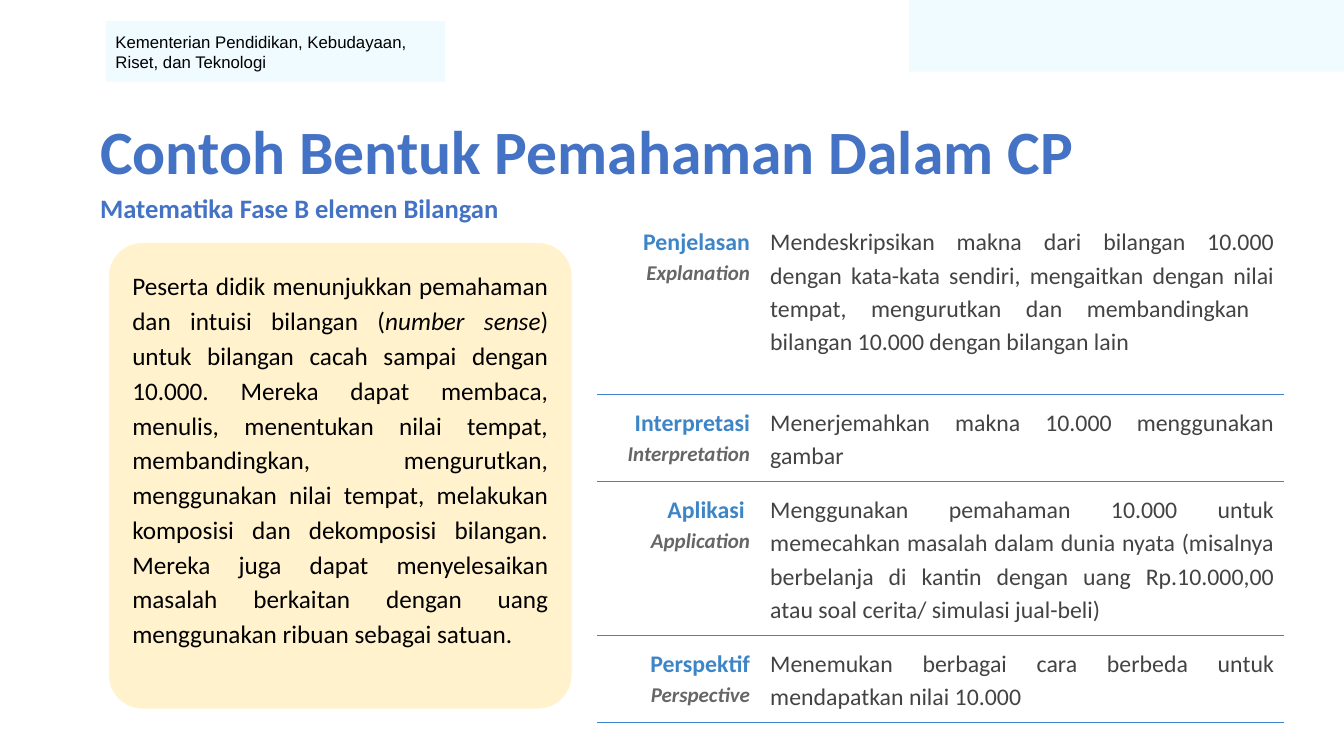
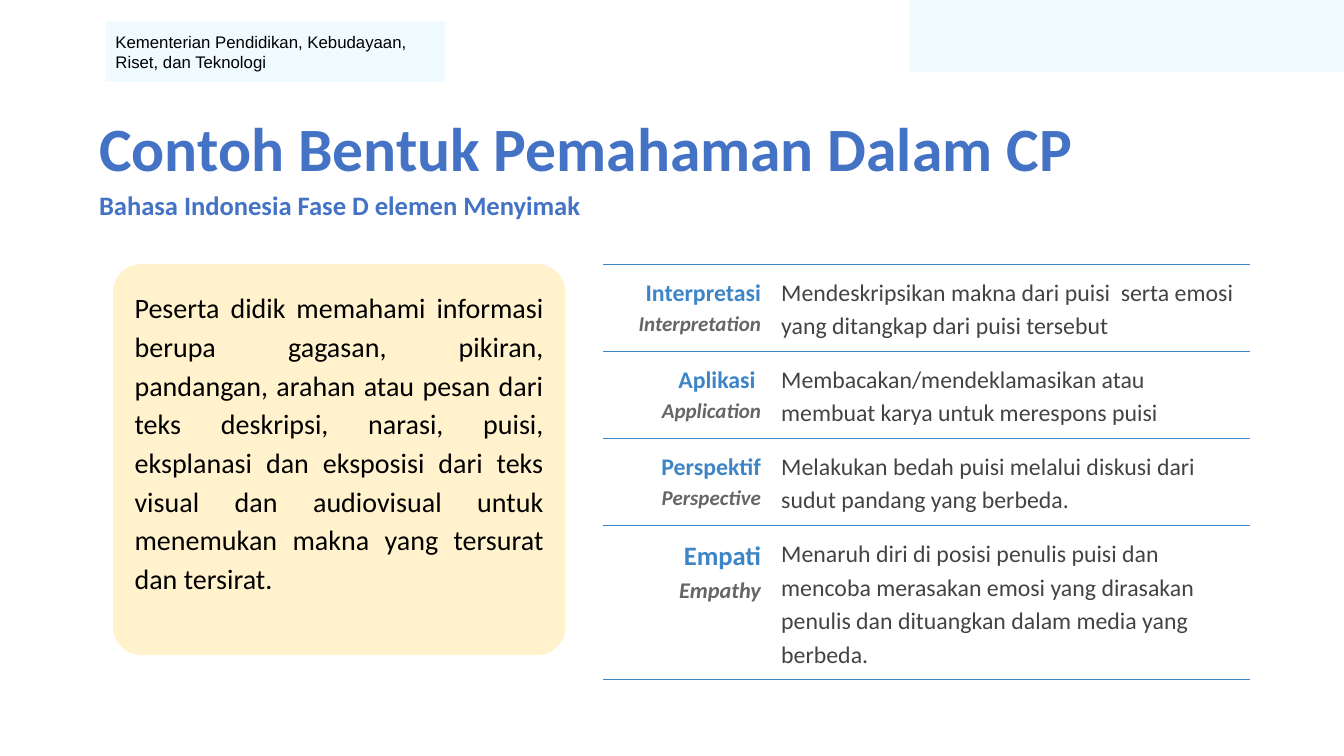
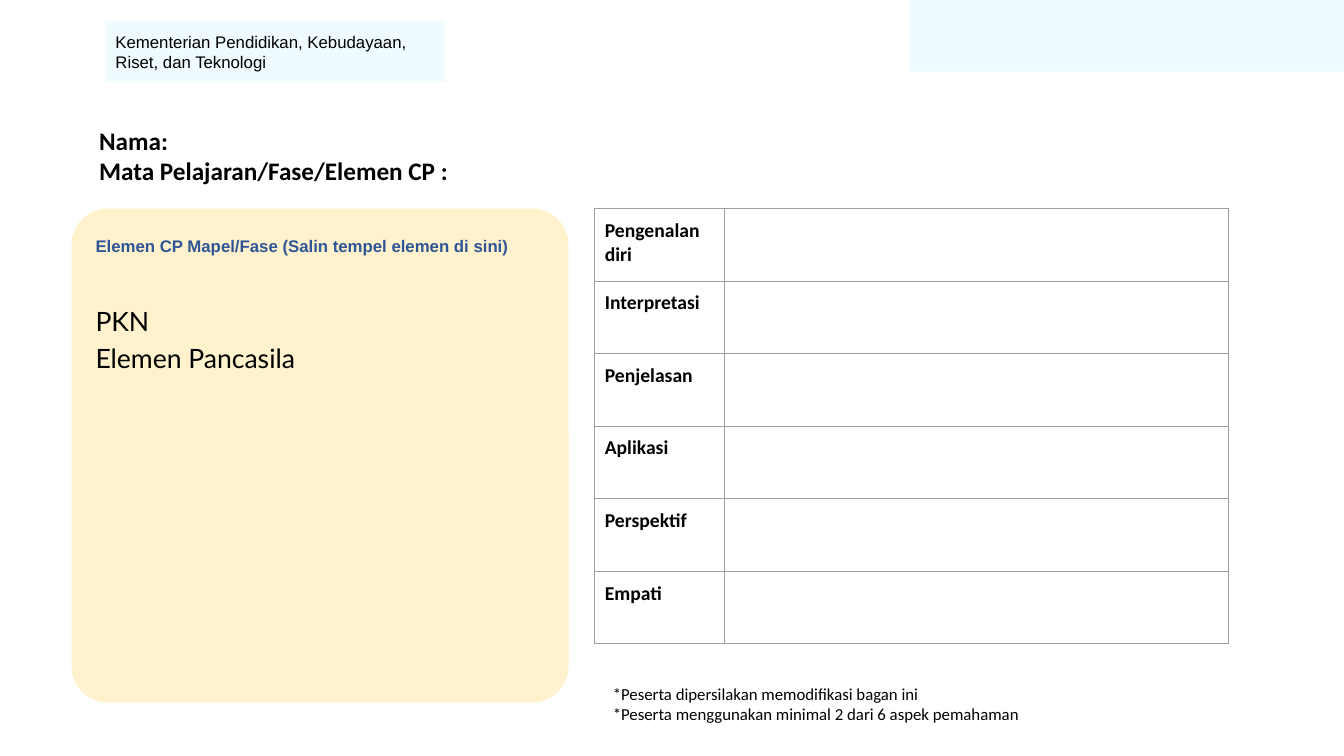
from lxml import etree
from pptx import Presentation
from pptx.dml.color import RGBColor
from pptx.enum.shapes import MSO_SHAPE
from pptx.enum.text import MSO_ANCHOR, MSO_AUTO_SIZE, PP_ALIGN
from pptx.oxml.ns import qn
from pptx.util import Pt

RECT, ROUNDED = MSO_SHAPE.RECTANGLE, MSO_SHAPE.ROUNDED_RECTANGLE
TOP, MIDDLE = MSO_ANCHOR.TOP, MSO_ANCHOR.MIDDLE
LEFT, RIGHT, JUSTIFY = PP_ALIGN.LEFT, PP_ALIGN.RIGHT, PP_ALIGN.JUSTIFY
NO_FIT = MSO_AUTO_SIZE.NONE

BLACK = RGBColor(0x00, 0x00, 0x00)
WHITE = RGBColor(0xFF, 0xFF, 0xFF)
PALE = RGBColor(0xF0, 0xFB, 0xFF)
CREAM = RGBColor(0xFF, 0xF2, 0xCC)
TITLE_BLUE = RGBColor(0x44, 0x72, 0xC4)
DEEP_BLUE = RGBColor(0x2F, 0x55, 0x97)
LINE_BLUE = RGBColor(0x3D, 0x85, 0xC6)
TEXT_GREY = RGBColor(0x43, 0x43, 0x43)
TERM_GREY = RGBColor(0x66, 0x66, 0x66)
GRID_GREY = RGBColor(0x9E, 0x9E, 0x9E)

SMALL, WIDE = 7.2, 9.6
LOOSE = {"line_spacing": 1.15}


def font(size, color=BLACK, name="Calibri", bold=False, italic=False):
    """Return the format values of a run."""
    return {"size": Pt(size), "color": color, "name": name, "bold": bold, "italic": italic}


HEADING = font(44, TITLE_BLUE, bold=True)
SUBHEADING = font(19, TITLE_BLUE, bold=True)
FORM_HEADING = font(18, bold=True)
FORM_LABEL = font(14, bold=True)
DESCRIPTION = font(17, TEXT_GREY)


def para(*runs, align=LEFT, **fmt):
    """Describe a paragraph by its runs and its format values."""
    return runs, {"alignment": align, **fmt}


def write(tf, paras):
    """Write described paragraphs into a text frame."""
    for i, (runs, fmt) in enumerate(paras):
        p = tf.paragraphs[0] if i == 0 else tf.add_paragraph()
        for key, value in fmt.items():
            setattr(p, key, value)
        for text, values in runs:
            r = p.add_run()
            r.text = text
            for key, value in values.items():
                if key == "color":
                    r.font.color.rgb = value
                else:
                    setattr(r.font, key, value)


def set_frame(tf, margin, anchor=TOP):
    """Set the insets, wrapping and anchor of a text frame."""
    values = {"word_wrap": True, "auto_size": NO_FIT, "vertical_anchor": anchor}
    for side in ("left", "right", "top", "bottom"):
        values["margin_" + side] = Pt(margin)
    for key, value in values.items():
        setattr(tf, key, value)


def add_block(slide, kind, box, color):
    """Add a flat filled shape without an outline."""
    sp = slide.shapes.add_shape(kind, *map(Pt, box))
    sp.shadow.inherit = False
    sp.fill.solid()
    sp.fill.fore_color.rgb = color
    sp.line.fill.background()
    return sp


def move_to_layout(sp, layout):
    """Move a shape from its slide to the layout."""
    layout.shapes.element.append(sp.element)


def build_bands(slide, layout):
    """Build the corner band and the ministry band on the layout."""
    corner = add_block(slide, RECT, (649.4, 0, 310.6, 51.2), PALE)
    ministry = add_block(slide, RECT, (75.4, 15.2, 242.6, 43.2), PALE)
    set_frame(ministry.text_frame, SMALL, MIDDLE)
    write(ministry.text_frame, [
        para(("Kementerian Pendidikan, Kebudayaan, Riset, dan Teknologi", font(12, name="Arial")))])
    for sp in (corner, ministry):
        move_to_layout(sp, layout)


def place_title(slide, box, paras):
    """Place and fill the title placeholder."""
    sp = slide.shapes.title
    for key, value in zip(("left", "top", "width", "height"), box):
        setattr(sp, key, Pt(value))
    set_frame(sp.text_frame, WIDE)
    write(sp.text_frame, paras)


def add_card(slide, box, paras):
    """Add the cream rounded card with its text."""
    sp = add_block(slide, ROUNDED, box, CREAM)
    sp.adjustments[0] = 0.073
    set_frame(sp.text_frame, WIDE)
    write(sp.text_frame, paras)


def set_borders(cell, colors):
    """Draw the cell borders named in colors and clear the others."""
    tc_pr = cell._tc.get_or_add_tcPr()
    for side in "LRTB":
        ln = etree.SubElement(tc_pr, qn("a:ln" + side), w=str(Pt(0.75)))
        if side in colors:
            fill = etree.SubElement(ln, qn("a:solidFill"))
            etree.SubElement(fill, qn("a:srgbClr"), val=str(colors[side]))
        else:
            etree.SubElement(ln, qn("a:noFill"))


def add_grid(slide, left, top, widths, heights, rows, borders):
    """Add a plain table; borders gives the colours by row number."""
    table = slide.shapes.add_table(len(heights), len(widths), Pt(left), Pt(top),
                                   Pt(sum(widths)), Pt(sum(heights))).table
    table.first_row = table.horz_banding = False
    for column, width in zip(table.columns, widths):
        column.width = Pt(width)
    for i, (height, paras_by_cell) in enumerate(zip(heights, rows)):
        table.rows[i].height = Pt(height)
        for cell, paras in zip(table.rows[i].cells, paras_by_cell):
            set_borders(cell, borders(i))
            cell.fill.background()
            for side in ("left", "right", "top", "bottom"):
                setattr(cell, "margin_" + side, Pt(SMALL))
            write(cell.text_frame, paras)


def add_aspects(slide, left, top, widths, heights, aspects, align, top_line):
    """Add the table of aspects of understanding."""
    def borders(i):
        """Return the horizontal rules of a row."""
        return {side: LINE_BLUE for side in "TB" if side == "B" or i or top_line}

    rows = []
    for name, term, text, name_size, term_size in aspects:
        rows.append((
            [para((name, font(name_size, LINE_BLUE, bold=True)), align=RIGHT, **LOOSE),
             para((term, font(term_size, TERM_GREY, bold=True, italic=True)), align=RIGHT, **LOOSE)],
            [para((text, DESCRIPTION), align=align, **LOOSE)]))
    add_grid(slide, left, top, widths, heights, rows, borders)


def add_example(slide, title_box, subject, card_box, card_runs, **aspects):
    """Fill a slide with an example: title, card and table of aspects."""
    place_title(slide, title_box, [
        para(("Contoh Bentuk Pemahaman Dalam CP", HEADING)), para((subject, SUBHEADING), **LOOSE)])
    add_aspects(slide, **aspects)
    add_card(slide, card_box, [para(*card_runs, align=JUSTIFY, **LOOSE)])


def add_form(slide):
    """Fill a slide with the worksheet form."""
    place_title(slide, (61.2, 79.9, 705, 39.6), [
        para((text, FORM_HEADING)) for text in ("Nama:", "Mata Pelajaran/Fase/Elemen CP :")])
    entry = font(19, name="Lato")
    add_card(slide, (51.1, 149, 355, 352.8), [
        para(("Elemen CP Mapel/Fase (Salin tempel elemen di sini)",
              font(12, DEEP_BLUE, "Arial", bold=True)), **LOOSE),
        para(("PKN", entry), space_before=Pt(32), **LOOSE),
        para(("Elemen Pancasila", entry), **LOOSE)])
    labels = ("Pengenalan diri", "Interpretasi", "Penjelasan", "Aplikasi", "Perspektif", "Empati")
    rows = [([para((label, FORM_LABEL))], []) for label in labels]
    add_grid(slide, 424.8, 149, (92.9, 360), [51.84] * len(labels), rows,
             lambda i: dict.fromkeys("LRTB", GRID_GREY))
    note = slide.shapes.add_textbox(*map(Pt, (430.6, 481, 409.7, 43.9)))
    set_frame(note.text_frame, SMALL)
    write(note.text_frame, [para((text, font(12))) for text in (
        "*Peserta dipersilakan memodifikasi bagan ini",
        "*Peserta menggunakan minimal 2 dari 6 aspek pemahaman")])


def main():
    """Build and save the presentation."""
    prs = Presentation()
    prs.slide_width, prs.slide_height = Pt(960), Pt(540)
    layout = prs.slide_layouts[5]
    background = prs.slide_master.background.fill
    background.solid()
    background.fore_color.rgb = WHITE
    numbers, listening, form = (prs.slides.add_slide(layout) for _ in range(3))
    build_bands(numbers, layout)

    body = font(18)
    add_example(
        numbers, (61.9, 71.3, 771, 60), "Matematika Fase B elemen Bilangan",
        (77.8, 173.5, 330.5, 332.6),
        [("Peserta didik menunjukkan pemahaman dan intuisi bilangan (", body),
         ("number sense", font(18, italic=True)),
         (") untuk bilangan cacah sampai dengan 10.000. Mereka dapat membaca, menulis, "
          "menentukan nilai tempat, membandingkan, mengurutkan, menggunakan nilai tempat, "
          "melakukan komposisi dan dekomposisi bilangan. Mereka juga dapat menyelesaikan "
          "masalah berkaitan dengan uang menggunakan ribuan sebagai satuan.", body)],
        left=426.4, top=152.6, widths=(116.6, 374.4), heights=(128.9, 58.3, 105.1, 61.2),
        align=JUSTIFY, top_line=False, aspects=[
            ("Penjelasan", "Explanation",
             "Mendeskripsikan makna dari bilangan 10.000 dengan kata-kata sendiri, mengaitkan "
             "dengan nilai tempat, mengurutkan dan membandingkan  bilangan 10.000 dengan "
             "bilangan lain", 17, 15),
            ("Interpretasi", "Interpretation",
             "Menerjemahkan makna 10.000 menggunakan gambar", 17, 15),
            ("Aplikasi ", "Application",
             "Menggunakan pemahaman 10.000 untuk memecahkan masalah dalam dunia nyata (misalnya "
             "berbelanja di kantin dengan uang Rp.10.000,00 atau soal cerita/ simulasi jual-beli)",
             17, 15),
            ("Perspektif", "Perspective",
             "Menemukan berbagai cara berbeda untuk mendapatkan nilai 10.000", 17, 15)])

    add_example(
        listening, (61.2, 69.1, 756.7, 39.6), "Bahasa Indonesia Fase D elemen Menyimak",
        (80.6, 188.6, 323.3, 279.4),
        [("Peserta didik memahami informasi berupa gagasan, pikiran, pandangan, arahan atau "
          "pesan dari teks deskripsi, narasi, puisi, eksplanasi dan eksposisi dari teks visual "
          "dan audiovisual untuk menemukan makna yang tersurat dan tersirat.", font(20))],
        left=430.6, top=188.6, widths=(120.2, 342), heights=(52.6, 52.6, 62.6, 95),
        align=LEFT, top_line=True, aspects=[
            ("Interpretasi", "Interpretation",
             "Mendeskripsikan makna dari puisi  serta emosi yang ditangkap dari puisi tersebut",
             17, 15),
            ("Aplikasi ", "Application",
             "Membacakan/mendeklamasikan atau membuat karya untuk merespons puisi", 17, 15),
            ("Perspektif", "Perspective",
             "Melakukan bedah puisi melalui diskusi dari sudut pandang yang berbeda.", 17, 15),
            ("Empati", "Empathy",
             "Menaruh diri di posisi penulis puisi dan mencoba merasakan emosi yang dirasakan "
             "penulis dan dituangkan dalam media yang berbeda.", 19, 16)])

    add_form(form)
    prs.save("out.pptx")


if __name__ == "__main__":
    main()
